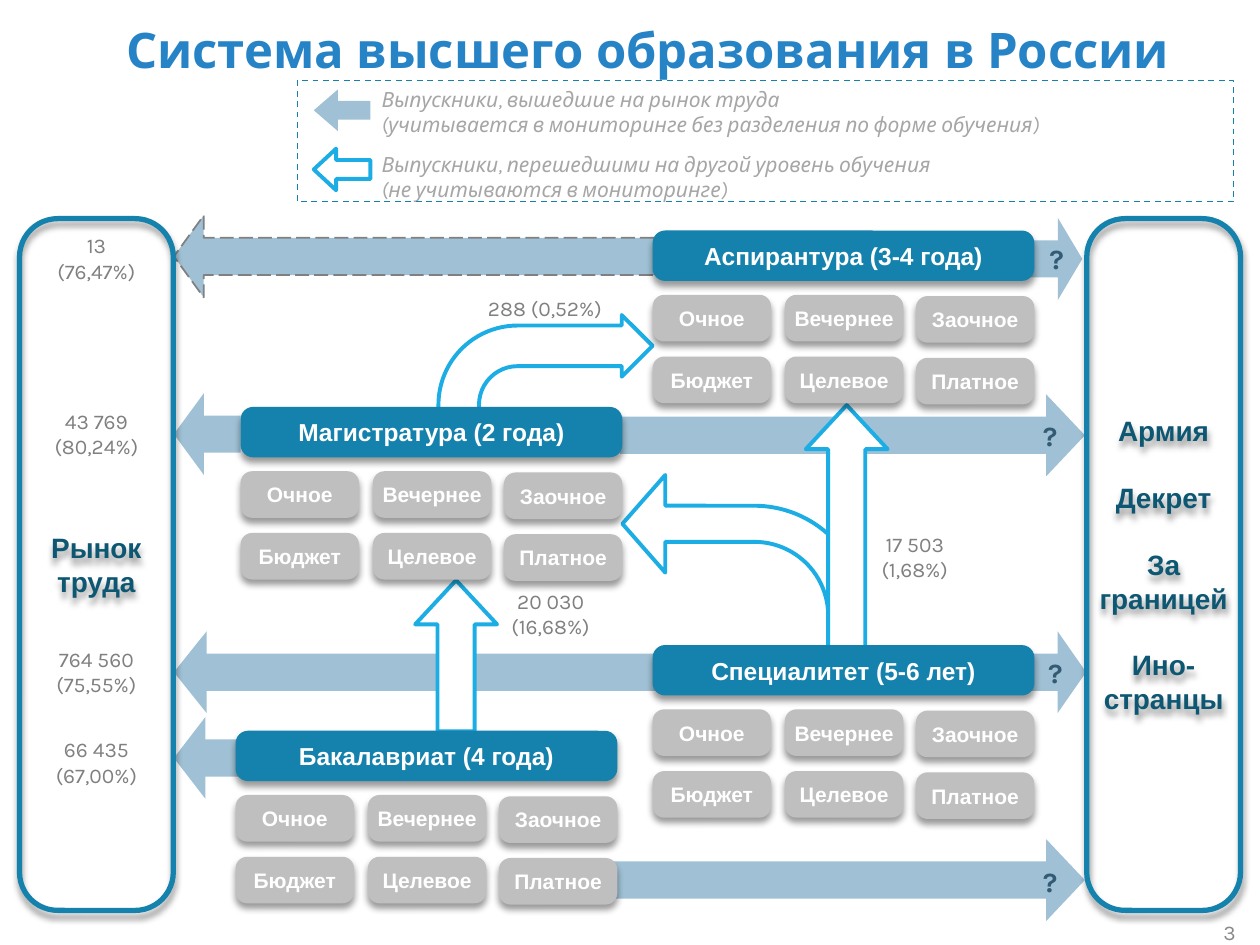
from lxml import etree
from pptx import Presentation
from pptx.dml.color import RGBColor
from pptx.enum.dml import MSO_LINE
from pptx.enum.shapes import MSO_SHAPE
from pptx.enum.text import MSO_ANCHOR, MSO_AUTO_SIZE, PP_ALIGN
from pptx.oxml.ns import qn
from pptx.util import Inches, Pt

RIGHT_ARROW = MSO_SHAPE.RIGHT_ARROW
BENT_ARROW = MSO_SHAPE.BENT_ARROW
ROUNDED = MSO_SHAPE.ROUNDED_RECTANGLE
RECTANGLE = MSO_SHAPE.RECTANGLE
DASH = MSO_LINE.DASH
LONG_DASH = MSO_LINE.LONG_DASH
MIDDLE = MSO_ANCHOR.MIDDLE
LEFT = PP_ALIGN.LEFT
CENTER = PP_ALIGN.CENTER
NO_FIT = MSO_AUTO_SIZE.NONE
GROW = MSO_AUTO_SIZE.SHAPE_TO_FIT_TEXT

BLUE = "1482AC"
PALE_BLUE = "A0C1D5"
CYAN = "1CADE4"
GRAY = "808080"
SILVER = "BFBFBF"
WHITE = "FFFFFF"
NAVY = "0E5772"

PANEL_INSETS = (0.02, 0.05, 0.02, 0.05)
STUDY_FORMS = (("Очное", "Вечернее", "Заочное"), ("Бюджет", "Целевое", "Платное"))


def color(value):
    return RGBColor.from_string(value)


def place(shape, frame):
    shape.left, shape.top, shape.width, shape.height = map(Inches, frame)


def add_figure(shapes, kind, frame, fill=None, line=None, width=1, dash=None, adjustments=()):
    figure = shapes.add_shape(kind, *map(Inches, frame))
    figure.shadow.inherit = False
    if fill:
        figure.fill.solid()
        figure.fill.fore_color.rgb = color(fill)
    else:
        figure.fill.background()
    if line:
        figure.line.color.rgb = color(line)
        figure.line.width = Pt(width)
        if dash:
            figure.line.dash_style = dash
    else:
        figure.line.fill.background()
    for index, value in enumerate(adjustments):
        figure.adjustments[index] = value
    return figure


def add_shadow(figure):
    effects = figure._element.spPr.find(qn("a:effectLst"))
    shadow = etree.SubElement(effects, qn("a:outerShdw"), blurRad=str(Pt(4)), dist=str(Pt(3)),
                              dir="5400000", rotWithShape="0")
    black = etree.SubElement(shadow, qn("a:srgbClr"), val="000000")
    etree.SubElement(black, qn("a:alpha"), val="40000")


def write(frame, lines, size, font, ink, align=CENTER, bold=False, italic=False, gaps=()):
    frame.word_wrap = True
    for index, line in enumerate(lines):
        paragraph = frame.paragraphs[0] if index == 0 else frame.add_paragraph()
        paragraph.text = line
        paragraph.alignment = align
        if index in gaps:
            paragraph.space_before = Pt(19)
        paragraph.font.size = Pt(size)
        paragraph.font.name = font
        paragraph.font.color.rgb = color(ink)
        paragraph.font.bold = bold
        paragraph.font.italic = italic


def set_insets(frame, insets):
    frame.margin_left, frame.margin_top, frame.margin_right, frame.margin_bottom = map(Inches, insets)
    frame.vertical_anchor = MIDDLE


def add_label(slide, frame, lines, size=12, ink=GRAY, **style):
    box = slide.shapes.add_textbox(*map(Inches, frame))
    write(box.text_frame, lines, size, "Karla", ink, **style)
    box.text_frame.auto_size = GROW
    return box


def add_flow(slide, frame, head, rotation=0, line=None, dash=None):
    arrow = add_figure(slide.shapes, RIGHT_ARROW, frame, PALE_BLUE, line, 1, dash, (0.454, head))
    arrow.rotation = rotation


def add_transfer(slide, kind, frame, adjustments, rotation=0):
    arrow = add_figure(slide.shapes, kind, frame, WHITE, CYAN, 2.25, None, adjustments)
    arrow.rotation = rotation
    return arrow


def add_plate(shapes, frame, text, size, fill):
    plate = add_figure(shapes, ROUNDED, frame, fill, adjustments=(0.248,))
    add_shadow(plate)
    set_insets(plate.text_frame, PANEL_INSETS)
    write(plate.text_frame, [text], size, "Arial", WHITE, bold=True)


def add_level(slide, left, top, name):
    shapes = slide.shapes.add_group_shape().shapes
    add_plate(shapes, (left, top, 3.03, 0.4), name, 14, BLUE)
    for row, forms in enumerate(STUDY_FORMS):
        for column, form in enumerate(forms):
            x = left + (0, 1.05, 2.09)[column]
            y = top + 0.51 + 0.49 * row + 0.01 * (column == 2)
            add_plate(shapes, (x, y, 0.94, 0.37), form, 12, SILVER)


def add_panel(slide, left, lines, insets, gaps=()):
    panel = add_figure(slide.shapes, ROUNDED, (left, 3.87, 5.49, 1.22), None, BLUE, 3, None, (0.248,))
    panel.rotation = 270
    add_shadow(panel)
    set_insets(panel.text_frame, insets)
    panel.text_frame._txBody.bodyPr.set("vert", "vert")
    write(panel.text_frame, lines, 16, "Arial", NAVY, bold=True, gaps=gaps)


def add_title(slide):
    title = slide.shapes.title
    place(title, (0.9, -0.02, 8.63, 0.87))
    frame = title.text_frame
    frame.vertical_anchor = MIDDLE
    frame.auto_size = NO_FIT
    write(frame, ["Система высшего образования в России"], 28, "Karla", "2683C6", LEFT, True)
    frame.paragraphs[0].line_spacing = 0.9


def add_legend(slide):
    add_flow(slide, (2.49, 0.71, 0.45, 0.33), 0.578, 180)
    add_transfer(slide, RIGHT_ARROW, (2.49, 1.18, 0.45, 0.33), (0.454, 0.538), 180)
    for top, width, text in (
        (0.64, 6.81, "Выпускники, вышедшие на рынок труда\v"
                     "(учитывается в мониторинге без разделения по форме обучения)"),
        (1.15, 6.69, "Выпускники, перешедшими на другой уровень обучения\v"
                     "(не учитываются в мониторинге)"),
    ):
        add_label(slide, (2.93, top, width, 0.5), [text], ink="A6A6A6", align=LEFT, italic=True)
    add_figure(slide.shapes, RECTANGLE, (2.36, 0.64, 7.43, 0.96), None, BLUE, 0.85, DASH)


def main():
    deck = Presentation()
    deck.slide_width, deck.slide_height = Inches(10), Inches(7.5)
    slide = deck.slides.add_slide(deck.slide_layouts[5])

    for left, top, width in ((4.92, 3.13, 3.69), (8.18, 1.73, 0.41), (8.14, 5.01, 0.48), (4.8, 6.66, 3.81)):
        add_flow(slide, (left, top, width, 0.65), 0.472)
    add_flow(slide, (1.38, 1.71, 4.71, 0.65), 0.364, 180, GRAY, LONG_DASH)
    for top, width, head in ((5.01, 4.95, 0.4), (5.69, 0.53, 0.472), (3.12, 0.53, 0.45)):
        add_flow(slide, (1.38, top, width, 0.65), head, 180)

    to_master = add_transfer(slide, BENT_ARROW, (4.94, 3.77, 1.92, 1.36), (0.211, 0.285, 0.25, 0.642))
    to_master._element.spPr.xfrm.set("flipH", "1")
    add_transfer(slide, RIGHT_ARROW, (5.76, 3.85, 1.92, 0.65), (0.454, 0.538), 270)
    add_transfer(slide, BENT_ARROW, (3.48, 2.5, 1.7, 0.98), (0.329, 0.25, 0.25, 0.642))

    add_title(slide)
    page = add_label(slide, (9.53, 7.3, 0.46, 0.19), ["3"], ink="898989")
    page.text_frame.auto_size = NO_FIT
    set_insets(page.text_frame, (0, 0, 0, 0))

    add_panel(slide, -1.98, ["Рынок труда"], PANEL_INSETS)
    add_transfer(slide, RIGHT_ARROW, (3.02, 4.88, 1.2, 0.65), (0.454, 0.538), 270)
    add_level(slide, 1.87, 5.8, "Бакалавриат (4 года)")
    add_legend(slide)

    add_label(slide, (6.65, 4.17, 1.22, 0.5), ["17 503 (1,68%)"])
    add_label(slide, (3.58, 2.3, 1.49, 0.3), ["288 (0,52%)"])
    add_label(slide, (3.83, 4.62, 1.08, 0.5), ["20 030 (16,68%)"])

    add_level(slide, 5.18, 5.12, "Специалитет (5-6 лет)")
    add_level(slide, 1.91, 3.23, "Магистратура (2 года)")
    add_level(slide, 5.18, 1.83, "Аспирантура (3-4 года)")
    add_panel(slide, 6.49, ["Армия", "Декрет", "За границей", "Ино-", "странцы"], (0, 0, 0, 0), (1, 2, 3))

    for left, top in ((7.91, 3.27), (7.96, 1.87), (7.95, 5.15), (7.91, 6.81)):
        add_label(slide, (left, top, 0.85, 0.37), ["?"], 16, "335B74", bold=True)
    for top, count, share in (
        (5.08, "764 560", "(75,55%)"),
        (5.8, "66 435", "(67,00%)"),
        (3.19, "43 769", "(80,24%)"),
        (1.8, "13", "(76,47%)"),
    ):
        add_label(slide, (0.02, top, 1.49, 0.5), [count, share])

    deck.save("out.pptx")


if __name__ == "__main__":
    main()
